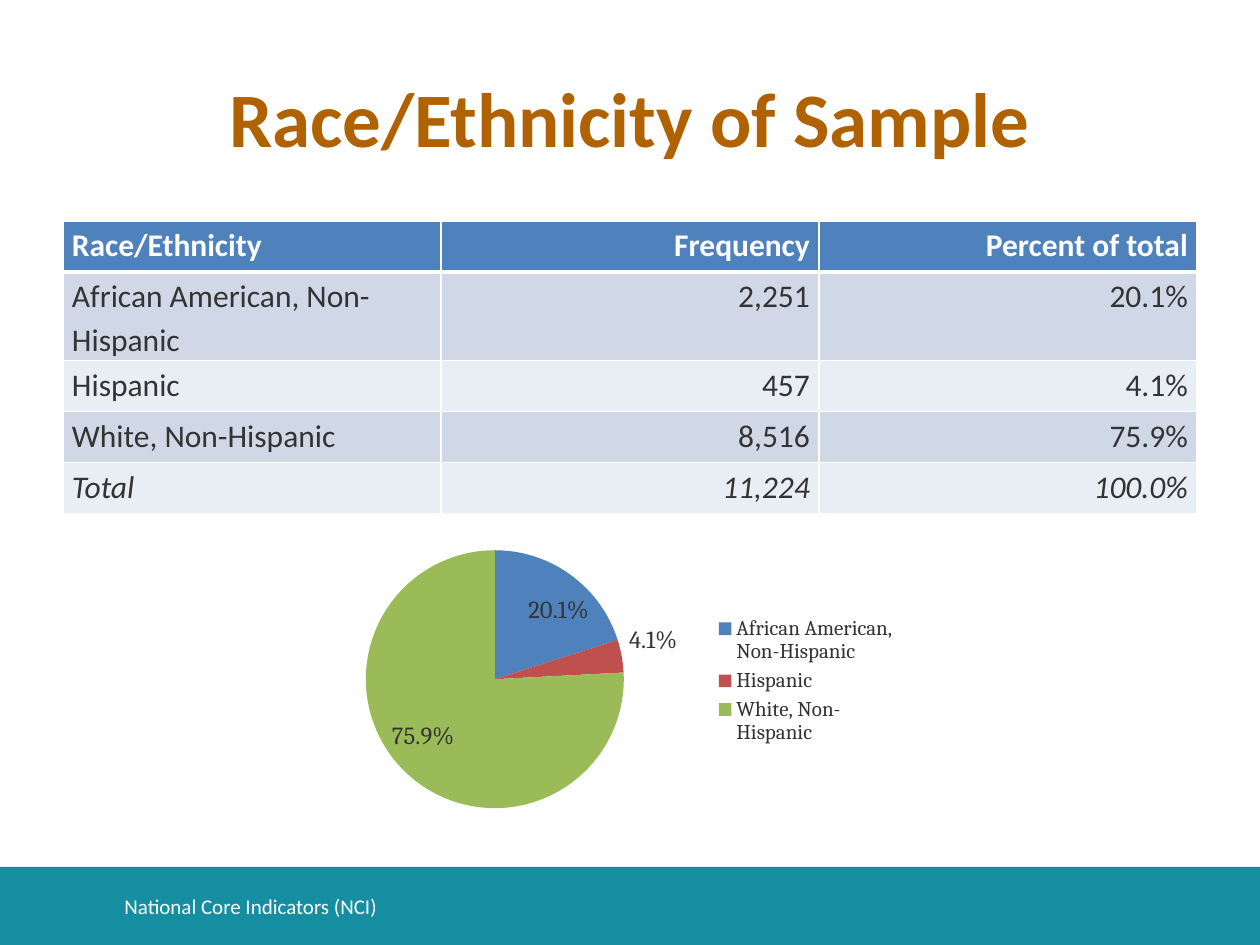
from lxml import etree
from pptx import Presentation
from pptx.chart.data import CategoryChartData
from pptx.dml.color import RGBColor
from pptx.enum.chart import XL_CHART_TYPE, XL_LABEL_POSITION, XL_LEGEND_POSITION
from pptx.enum.shapes import MSO_SHAPE
from pptx.enum.text import MSO_ANCHOR, PP_ALIGN
from pptx.oxml import parse_xml
from pptx.oxml.ns import nsdecls, qn
from pptx.util import Pt

PIE = XL_CHART_TYPE.PIE
BEST_FIT = XL_LABEL_POSITION.BEST_FIT
LEGEND_RIGHT = XL_LEGEND_POSITION.RIGHT
RECTANGLE = MSO_SHAPE.RECTANGLE
MIDDLE = MSO_ANCHOR.MIDDLE
LEFT, CENTER, RIGHT = PP_ALIGN.LEFT, PP_ALIGN.CENTER, PP_ALIGN.RIGHT

PX = 914400 // 126  # EMU in one pixel

THEME = {
    "font": "Calibri", "chart_font": "Cambria",
    "title": "B06100", "text": "333333", "white": "FFFFFF", "footer": "168EA2",
    "header": "4F81BD", "bands": ["D0D8E8", "E9EDF4"],
    "slices": ["4F81BD", "C0504D", "9BBB59"],
    "title_size": 44, "table_size": 18, "footer_size": 12,
    "chart_size": 10, "legend_size": 12, "label_size": 14,
}


def style(font, size, color, name=THEME["font"], bold=False, italic=False):
    font.name, font.size, font.bold, font.italic = name, Pt(size), bold, italic
    font.color.rgb = RGBColor.from_string(color)


def paint(fill, color):
    fill.solid()
    fill.fore_color.rgb = RGBColor.from_string(color)


prs = Presentation()
prs.slide_width, prs.slide_height = 1260 * PX, 945 * PX
slide = prs.slides.add_slide(prs.slide_layouts[5])

# Footer band
band = slide.shapes.add_shape(RECTANGLE, 0, 867 * PX, 1260 * PX, 78 * PX)
band.shadow.inherit = False
paint(band.fill, THEME["footer"])
band.line.fill.background()

# Title
title = slide.shapes.title
title.left, title.top, title.width, title.height = 63 * PX, 38 * PX, 1134 * PX, 157 * PX
title.text_frame.text = "Race/Ethnicity of Sample"
title.text_frame.vertical_anchor = MIDDLE
heading = title.text_frame.paragraphs[0]
heading.alignment = CENTER
style(heading.font, THEME["title_size"], THEME["title"], bold=True)

# Frequency table
groups = [
    ("African American, Non-Hispanic", "2,251", 0.201),
    ("Hispanic", "457", 0.041),
    ("White, Non-Hispanic", "8,516", 0.759),
]
rows = [("Race/Ethnicity", "Frequency", "Percent of total")]
rows += [(group, count, f"{share:.1%}") for group, count, share in groups]
rows.append(("Total", "11,224", "100.0%"))
frequency = slide.shapes.add_table(
    len(rows), 3, 63 * PX, 221 * PX, 1134 * PX, 51 * len(rows) * PX).table
for r, row in enumerate(rows):
    is_header, is_total = r == 0, r == len(rows) - 1
    for c, value in enumerate(row):
        cell = frequency.cell(r, c)
        cell.margin_left = cell.margin_right = 9 * PX
        cell.margin_top = cell.margin_bottom = 0
        for side in "LRTB":
            heavy = (is_header and side == "B") or (r == 1 and side == "T")
            cell._tc.get_or_add_tcPr().append(parse_xml(
                f'<a:ln{side} {nsdecls("a")} w="{Pt(3 if heavy else 1)}"><a:solidFill>'
                f'<a:srgbClr val="{THEME["white"]}"/></a:solidFill></a:ln{side}>'))
        paint(cell.fill, THEME["header"] if is_header else THEME["bands"][(r - 1) % 2])
        cell.text = value
        entry = cell.text_frame.paragraphs[0]
        entry.alignment = RIGHT if c else LEFT
        entry.line_spacing = 1.15
        style(entry.font, THEME["table_size"], THEME["white" if is_header else "text"],
              bold=is_header, italic=is_total)

# Footer text
footer = slide.shapes.add_textbox(112 * PX, 881 * PX, 932 * PX, 50 * PX).text_frame
footer.word_wrap = True
footer.vertical_anchor = MIDDLE
footer.text = "National Core Indicators (NCI)"
style(footer.paragraphs[0].font, THEME["footer_size"], THEME["white"])

# Pie of shares
shares = CategoryChartData(number_format="0.0%")
shares.categories = [group for group, _, _ in groups]
shares.add_series("Series 1", [share for _, _, share in groups])
pie = slide.shapes.add_chart(PIE, 349 * PX, 509 * PX, 561 * PX, 344 * PX, shares).chart
pie.has_title = False
style(pie.font, THEME["chart_size"], THEME["text"], THEME["chart_font"])
pie.has_legend = True
pie.legend.position = LEGEND_RIGHT
pie.legend.include_in_layout = False
style(pie.legend.font, THEME["legend_size"], THEME["text"], THEME["chart_font"])
plot = pie.plots[0]
plot.vary_by_categories = True
for i, color in enumerate(THEME["slices"]):
    paint(plot.series[0].points[i].format.fill, color)
plot.has_data_labels = True
labels = plot.data_labels
labels.show_value, labels.show_percentage = True, False
labels.number_format, labels.number_format_is_linked = "0.0%", False
labels.position = BEST_FIT
style(labels.font, THEME["label_size"], THEME["text"], THEME["chart_font"])

# Fixed place of the pie inside its frame
plot_area = pie._chartSpace.find(".//" + qn("c:plotArea"))
for old in plot_area.findall(qn("c:layout")):
    plot_area.remove(old)
layout = etree.Element(qn("c:layout"))
manual = etree.SubElement(layout, qn("c:manualLayout"))
for tag, value in [("layoutTarget", "inner"), ("xMode", "edge"), ("yMode", "edge"),
                   ("x", 0.03), ("y", 0.12), ("w", 0.46), ("h", 0.75)]:
    etree.SubElement(manual, qn(f"c:{tag}")).set("val", str(value))
plot_area.insert(0, layout)

prs.save("out.pptx")
